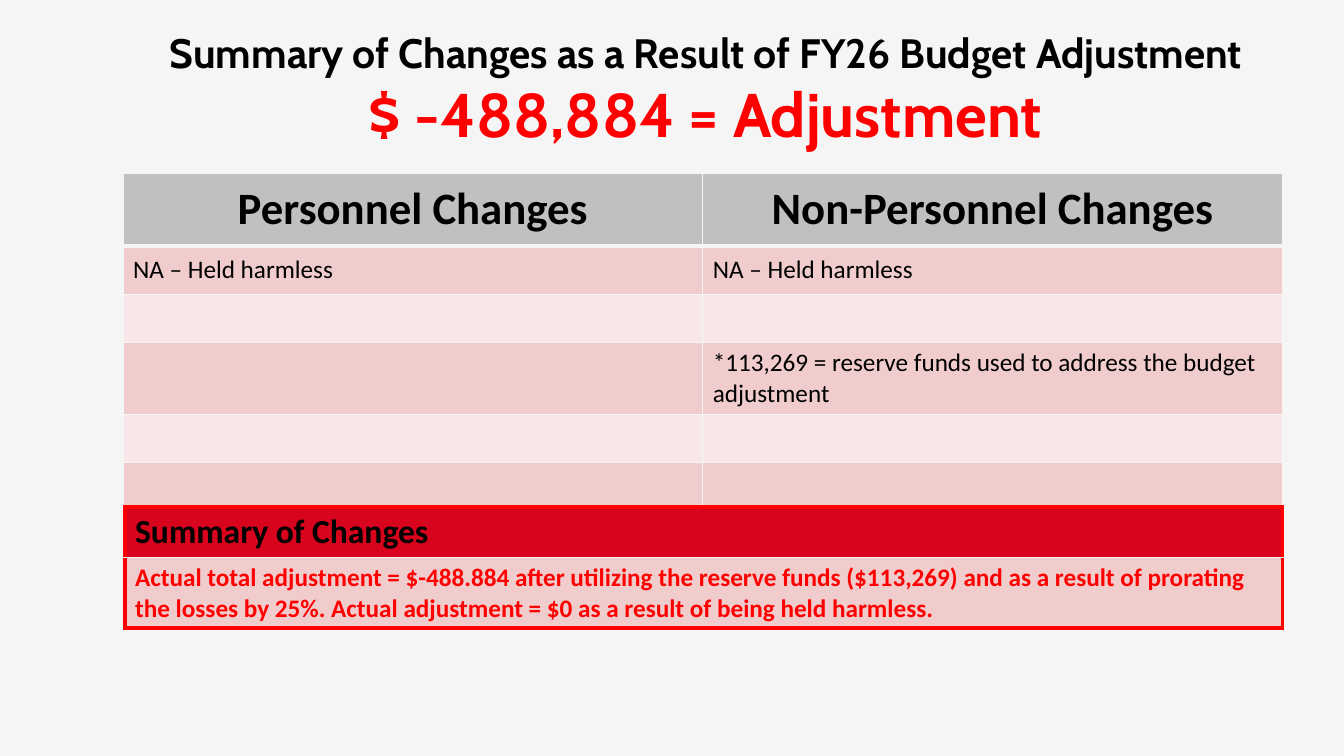
"""Build the budget adjustment summary slide."""
from dataclasses import dataclass

from lxml import etree
from pptx import Presentation
from pptx.dml.color import RGBColor
from pptx.enum.text import MSO_ANCHOR, PP_ALIGN
from pptx.oxml.ns import qn
from pptx.util import Inches, Pt

CENTER, LEFT = PP_ALIGN.CENTER, PP_ALIGN.LEFT
TOP, MIDDLE = MSO_ANCHOR.TOP, MSO_ANCHOR.MIDDLE

COLORS = {
    "page": "F5F5F5",
    "black": "000000",
    "red": "FF0000",
    "crimson": "D8031C",
    "header": "C0C0C0",
    "band_dark": "F0CCCD",
    "band_light": "F8E7E8",
}
SIDES = {"left": "a:lnL", "right": "a:lnR", "top": "a:lnT", "bottom": "a:lnB"}
THIN = {side: ("page", 1) for side in SIDES}
RED_SIDES = {"left": ("red", 3), "right": ("red", 3)}


@dataclass(frozen=True)
class TextStyle:
    font: str
    size: float
    color: str
    bold: bool = True
    align: int = LEFT


@dataclass(frozen=True)
class Row:
    texts: tuple
    height: float
    fill: str
    style: TextStyle
    borders: dict


@dataclass(frozen=True)
class Grid:
    left: float
    top: float
    column_width: float
    anchor: int
    rows: tuple


TITLE = TextStyle("Cabin", 29.3, "black", align=CENTER)
AMOUNT = TextStyle("Cabin", 44, "red", align=CENTER)
HEADING = TextStyle("Calibri", 32, "black", align=CENTER)
BODY = TextStyle("Calibri", 18, "black", bold=False)
SUMMARY_HEADING = TextStyle("Calibri", 24, "black")
SUMMARY = TextStyle("Calibri", 18, "red")

TITLE_LINES = (
    ("Summary of Changes as a Result of FY26 Budget Adjustment", TITLE),
    ("$ -488,884 = Adjustment", AMOUNT),
)
CHANGES = (
    (("NA – Held harmless", "NA – Held harmless"), 0.48),
    (("", ""), 0.48),
    (("", "*113,269 = reserve funds used to address the budget adjustment"), 0.71),
    (("", ""), 0.48),
    (("", ""), 0.48),
)
HEADER_ROW = Row(("Personnel Changes", "Non-Personnel Changes"), 0.72, "header",
                 HEADING, THIN | {"bottom": ("page", 3)})
CHANGE_ROWS = tuple(
    Row(texts, height, "band_light" if index % 2 else "band_dark", BODY,
        THIN | ({} if index else {"top": ("page", 3)}))
    for index, (texts, height) in enumerate(CHANGES)
)
SUMMARY_ROWS = (
    Row(("Summary of Changes",), 0.5, "crimson", SUMMARY_HEADING,
        THIN | RED_SIDES | {"top": ("red", 3)}),
    Row(("Actual total adjustment = $-488.884 after utilizing the reserve funds "
         "($113,269) and as a result of prorating the losses by 25%. "
         "Actual adjustment = $0 as a result of being held harmless.",),
        0.7, "band_dark", SUMMARY, THIN | RED_SIDES | {"bottom": ("red", 3)}),
)
GRIDS = (
    Grid(1.22, 1.72, 5.75, MIDDLE, (HEADER_ROW, *CHANGE_ROWS)),
    Grid(1.24, 5.03, 11.48, TOP, SUMMARY_ROWS),
)


def rgb(name: str) -> RGBColor:
    return RGBColor.from_string(COLORS[name])


def write_text(para, text: str, style: TextStyle) -> None:
    para.alignment = style.align
    if not text:
        return
    span = para.add_run()
    span.text = text
    formats = {"name": style.font, "size": Pt(style.size), "bold": style.bold}
    for attribute, value in formats.items():
        setattr(span.font, attribute, value)
    span.font.color.rgb = rgb(style.color)


def draw_borders(cell, borders: dict) -> None:
    properties = cell._tc.get_or_add_tcPr()
    for side, tag in SIDES.items():
        color, width = borders[side]
        line = etree.SubElement(properties, qn(tag), w=str(Pt(width)))
        fill = etree.SubElement(line, qn("a:solidFill"))
        etree.SubElement(fill, qn("a:srgbClr"), val=COLORS[color])


def draw_title(page) -> None:
    box = page.shapes.add_textbox(Inches(1), Inches(0.22), Inches(12), Inches(0.92))
    frame = box.text_frame
    frame.word_wrap = True
    for index, (text, style) in enumerate(TITLE_LINES):
        para = frame.add_paragraph() if index else frame.paragraphs[0]
        write_text(para, text, style)


def draw_grid(page, grid: Grid) -> None:
    column_count = len(grid.rows[0].texts)
    table = page.shapes.add_table(
        len(grid.rows), column_count, Inches(grid.left), Inches(grid.top),
        Inches(grid.column_width * column_count),
        Inches(sum(row.height for row in grid.rows)),
    ).table
    table.first_row = table.horz_banding = False
    for column in table.columns:
        column.width = Inches(grid.column_width)
    for row_index, row in enumerate(grid.rows):
        table.rows[row_index].height = Inches(row.height)
        for column_index, text in enumerate(row.texts):
            cell = table.cell(row_index, column_index)
            cell.vertical_anchor = grid.anchor
            draw_borders(cell, row.borders)
            cell.fill.solid()
            cell.fill.fore_color.rgb = rgb(row.fill)
            write_text(cell.text_frame.paragraphs[0], text, row.style)


def main() -> None:
    deck = Presentation()
    deck.slide_width, deck.slide_height = Inches(13.33), Inches(7.5)
    page = deck.slides.add_slide(deck.slide_layouts[6])
    page.background.fill.solid()
    page.background.fill.fore_color.rgb = rgb("page")
    draw_title(page)
    for grid in GRIDS:
        draw_grid(page, grid)
    deck.save("out.pptx")


if __name__ == "__main__":
    main()
